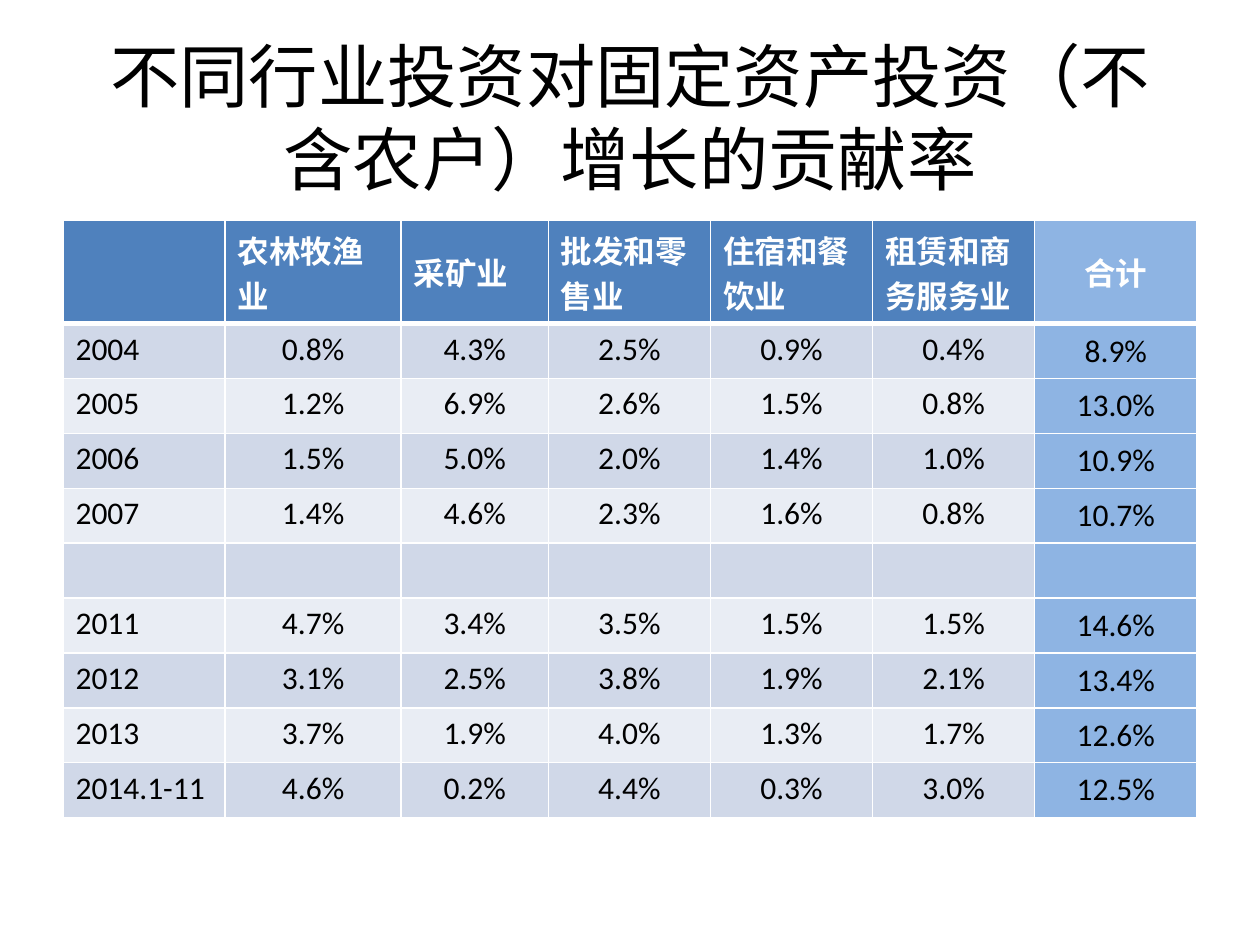
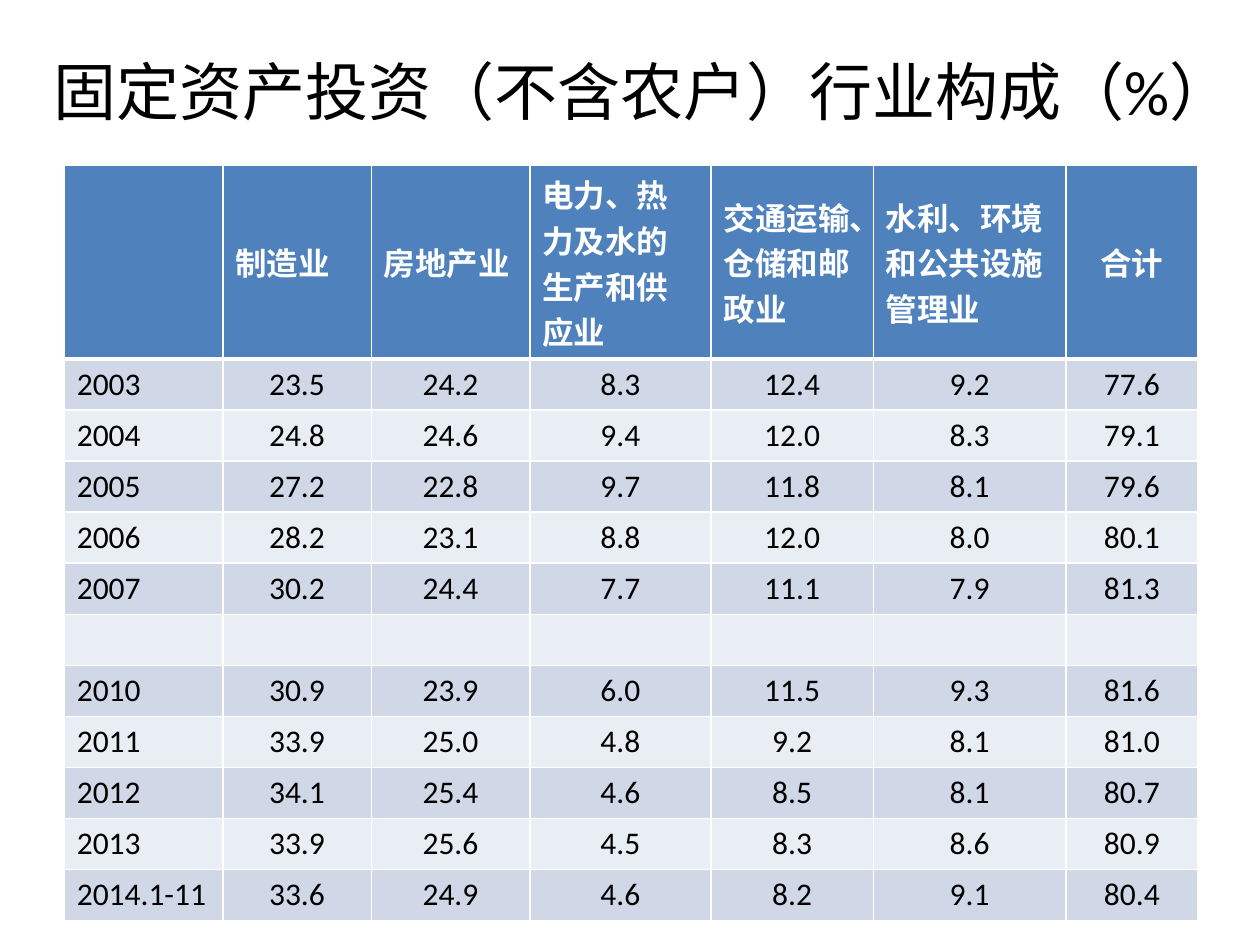
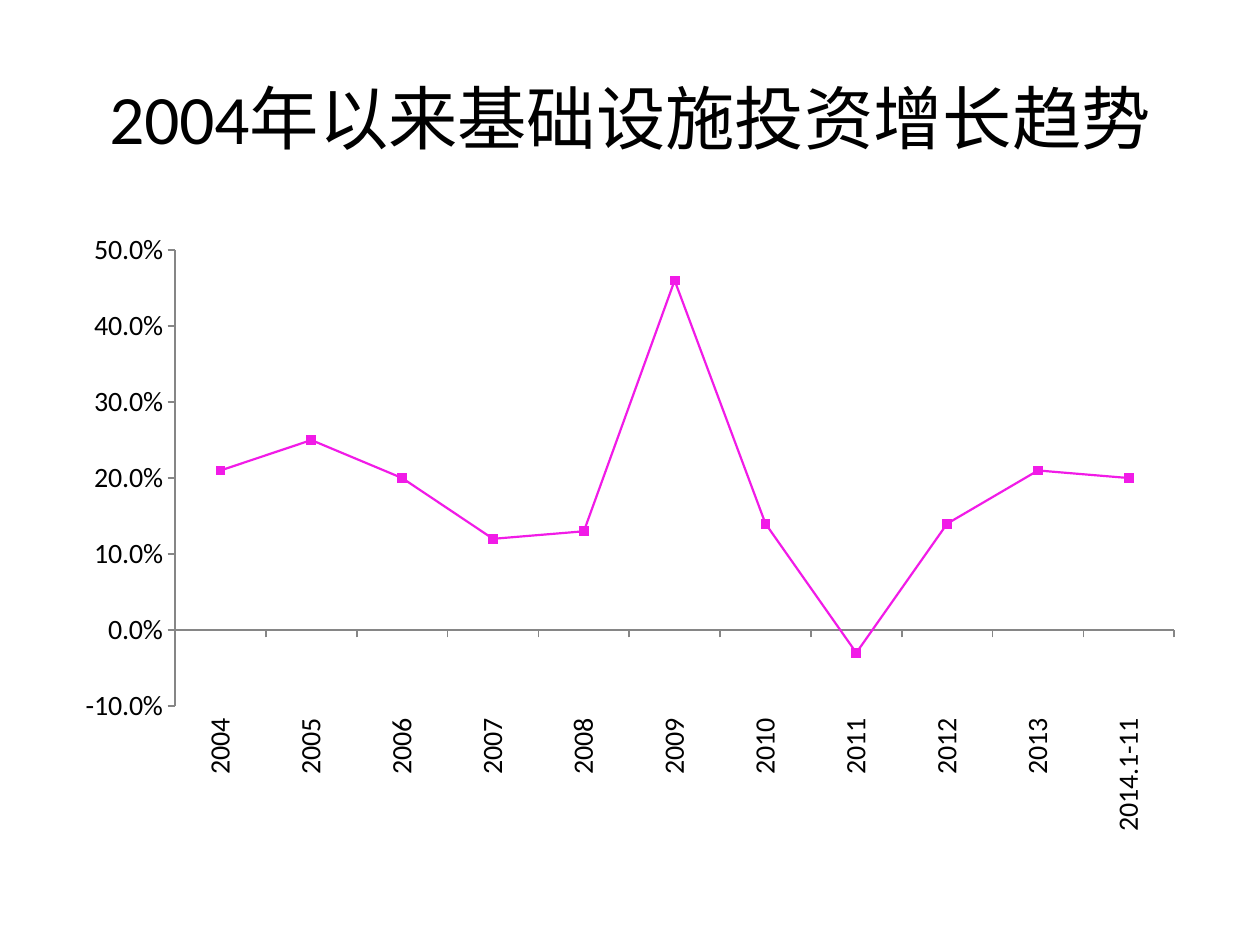
from lxml.etree import SubElement
from pptx import Presentation
from pptx.chart.data import CategoryChartData
from pptx.dml.color import RGBColor
from pptx.enum.chart import XL_CHART_TYPE as CHART, XL_MARKER_STYLE as MARKER
from pptx.enum.chart import XL_TICK_LABEL_POSITION as LABELS, XL_TICK_MARK as TICK
from pptx.enum.text import MSO_ANCHOR as ANCHOR, PP_ALIGN as ALIGN
from pptx.oxml.ns import qn
from pptx.util import Inches, Pt

FONT = "Calibri"
BLACK, WHITE = "000000", "FFFFFF"
HEADER, TOTAL = "4F81BD", "8EB4E3"
BANDS = ["D0D8E8", "E9EDF4"]
AXIS, LINE, DOT = "868686", "F11BE7", "ED19BB"

TITLE_BOX = (0.5, 0.3, 9, 1.25)

SHARE_HEADS = ["", "农林牧渔业", "采矿业", "批发和零售业", "住宿和餐饮业", "租赁和商务服务业", "合计"]
SHARE_ROWS = [
    ["2004", "0.8%", "4.3%", "2.5%", "0.9%", "0.4%", "8.9%"],
    ["2005", "1.2%", "6.9%", "2.6%", "1.5%", "0.8%", "13.0%"],
    ["2006", "1.5%", "5.0%", "2.0%", "1.4%", "1.0%", "10.9%"],
    ["2007", "1.4%", "4.6%", "2.3%", "1.6%", "0.8%", "10.7%"],
    [""] * 7,
    ["2011", "4.7%", "3.4%", "3.5%", "1.5%", "1.5%", "14.6%"],
    ["2012", "3.1%", "2.5%", "3.8%", "1.9%", "2.1%", "13.4%"],
    ["2013", "3.7%", "1.9%", "4.0%", "1.3%", "1.7%", "12.6%"],
    ["2014.1-11", "4.6%", "0.2%", "4.4%", "0.3%", "3.0%", "12.5%"],
]
MIX_HEADS = ["", "制造业", "房地产业", "电力、热力及水的生产和供应业",
             "交通运输、仓储和邮政业", "水利、环境和公共设施管理业", "合计"]
MIX_ROWS = [
    ["2003", "23.5", "24.2", "8.3", "12.4", "9.2", "77.6"],
    ["2004", "24.8", "24.6", "9.4", "12.0", "8.3", "79.1"],
    ["2005", "27.2", "22.8", "9.7", "11.8", "8.1", "79.6"],
    ["2006", "28.2", "23.1", "8.8", "12.0", "8.0", "80.1"],
    ["2007", "30.2", "24.4", "7.7", "11.1", "7.9", "81.3"],
    [""] * 7,
    ["2010", "30.9", "23.9", "6.0", "11.5", "9.3", "81.6"],
    ["2011", "33.9", "25.0", "4.8", "9.2", "8.1", "81.0"],
    ["2012", "34.1", "25.4", "4.6", "8.5", "8.1", "80.7"],
    ["2013", "33.9", "25.6", "4.5", "8.3", "8.6", "80.9"],
    ["2014.1-11", "33.6", "24.9", "4.6", "8.2", "9.1", "80.4"],
]
YEARS = [str(year) for year in range(2004, 2014)] + ["2014.1-11"]
GROWTH = [0.21, 0.25, 0.2, 0.12, 0.13, 0.46, 0.14, -0.03, 0.14, 0.21, 0.2]


def rgb(color):
    return RGBColor.from_string(color)


def add_run(p, text, size, color, bold=False):
    r = p.add_run()
    r.text = text
    r.font.name = FONT
    r.font.size = Pt(size)
    r.font.bold = bold
    r.font.color.rgb = rgb(color)


def add_title(s, text, box=TITLE_BOX, size=39.6, margin=0.1):
    tf = s.shapes.add_textbox(*map(Inches, box)).text_frame
    tf.word_wrap = True
    tf.vertical_anchor = ANCHOR.MIDDLE
    tf.margin_left = tf.margin_right = Inches(margin)
    p = tf.paragraphs[0]
    p.alignment = ALIGN.CENTER
    add_run(p, text, size, BLACK)


def set_borders(cell, **widths):
    tcPr = cell._tc.get_or_add_tcPr()
    for side in "LRTB":
        ln = SubElement(tcPr, qn(f"a:ln{side}"), w=str(Pt(widths.get(side, 1))))
        fill = SubElement(ln, qn("a:solidFill"))
        SubElement(fill, qn("a:srgbClr"), val=WHITE)


def fill_cell(cell, text, fill, color, align, anchor, bold=False):
    cell.fill.solid()
    cell.fill.fore_color.rgb = rgb(fill)
    cell.vertical_anchor = anchor
    p = cell.text_frame.paragraphs[0]
    p.alignment = align
    if text:
        add_run(p, text, 18, color, bold)
    else:
        p.font.size = Pt(18)


def add_data_table(s, box, shares, head_height, heads, rows, total_fill=None):
    left, top, width, height = box
    frame = s.shapes.add_table(len(rows) + 1, len(heads), *map(Inches, box))
    table = frame.table
    last = len(heads) - 1
    row_height = (height - head_height) / len(rows)
    for column, share in zip(table.columns, shares):
        column.width = Inches(width * share / sum(shares))
    for i, row in enumerate(table.rows):
        row.height = Inches(row_height if i else head_height)

    for j, text in enumerate(heads):
        cell = table.cell(0, j)
        set_borders(cell, B=3)
        fill = total_fill if total_fill and j == last else HEADER
        align = ALIGN.CENTER if j == last else ALIGN.LEFT
        fill_cell(cell, text, fill, WHITE, align, ANCHOR.MIDDLE, True)

    for i, values in enumerate(rows, 1):
        for j, text in enumerate(values):
            cell = table.cell(i, j)
            set_borders(cell, T=3 if i == 1 else 1)
            in_total = total_fill and j == last
            fill = total_fill if in_total else BANDS[(i - 1) % 2]
            align = ALIGN.CENTER if j else ALIGN.LEFT
            anchor = ANCHOR.MIDDLE if in_total else ANCHOR.TOP
            fill_cell(cell, text, fill, BLACK, align, anchor)


def add_growth_chart(s, box):
    data = CategoryChartData(number_format="0.0%")
    data.categories = YEARS
    data.add_series("Series 1", GROWTH)
    chart = s.shapes.add_chart(CHART.LINE_MARKERS, *map(Inches, box), data).chart
    chart.has_title = False
    chart.has_legend = False
    chart.font.name = FONT
    chart.font.size = Pt(16)
    chart.font.color.rgb = rgb(BLACK)

    years, rates = chart.category_axis, chart.value_axis
    for axis in (years, rates):
        axis.has_major_gridlines = False
        axis.major_tick_mark = TICK.OUTSIDE
        axis.format.line.color.rgb = rgb(AXIS)
        axis.format.line.width = Pt(1)
        axis.tick_labels.font.size = Pt(16)
    years.tick_label_position = LABELS.LOW
    years._element.find(qn("c:txPr")).find(qn("a:bodyPr")).set("rot", "-5400000")
    rates.minimum_scale, rates.maximum_scale, rates.major_unit = -0.1, 0.5, 0.1
    rates.tick_labels.number_format = "0.0%"
    rates.tick_labels.number_format_is_linked = False

    plot = chart.plots[0]
    plot.vary_by_categories = False
    series = plot.series[0]
    series.smooth = False
    series.format.line.color.rgb = rgb(LINE)
    series.format.line.width = Pt(1.25)
    marker = series.marker
    marker.style = MARKER.SQUARE
    marker.size = 5
    marker.format.fill.solid()
    marker.format.fill.fore_color.rgb = rgb(DOT)
    marker.format.line.color.rgb = rgb(LINE)


def main():
    prs = Presentation()
    prs.slide_width, prs.slide_height = Inches(10), Inches(7.5)
    blank = prs.slide_layouts[6]

    s = prs.slides.add_slide(blank)
    add_title(s, "不同行业投资对固定资产投资（不含农户）增长的贡献率", margin=0.15)
    add_data_table(s, (0.5, 1.75, 9, 4.74), [1.29, 1.4, 1.17] + [1.29] * 4, 0.82,
                   SHARE_HEADS, SHARE_ROWS, TOTAL)

    s = prs.slides.add_slide(blank)
    add_title(s, "固定资产投资（不含农户）行业构成（%）", (0.2, 0.21, 9.8, 1.01), 36)
    add_data_table(s, (0.51, 1.31, 9, 6), [1.26, 1.18, 1.26, 1.44, 1.29, 1.53, 1.05], 1.54,
                   MIX_HEADS, MIX_ROWS)

    s = prs.slides.add_slide(blank)
    add_title(s, "2004年以来基础设施投资增长趋势")
    add_growth_chart(s, (0.5, 1.75, 9, 4.95))

    prs.save("out.pptx")


if __name__ == "__main__":
    main()
